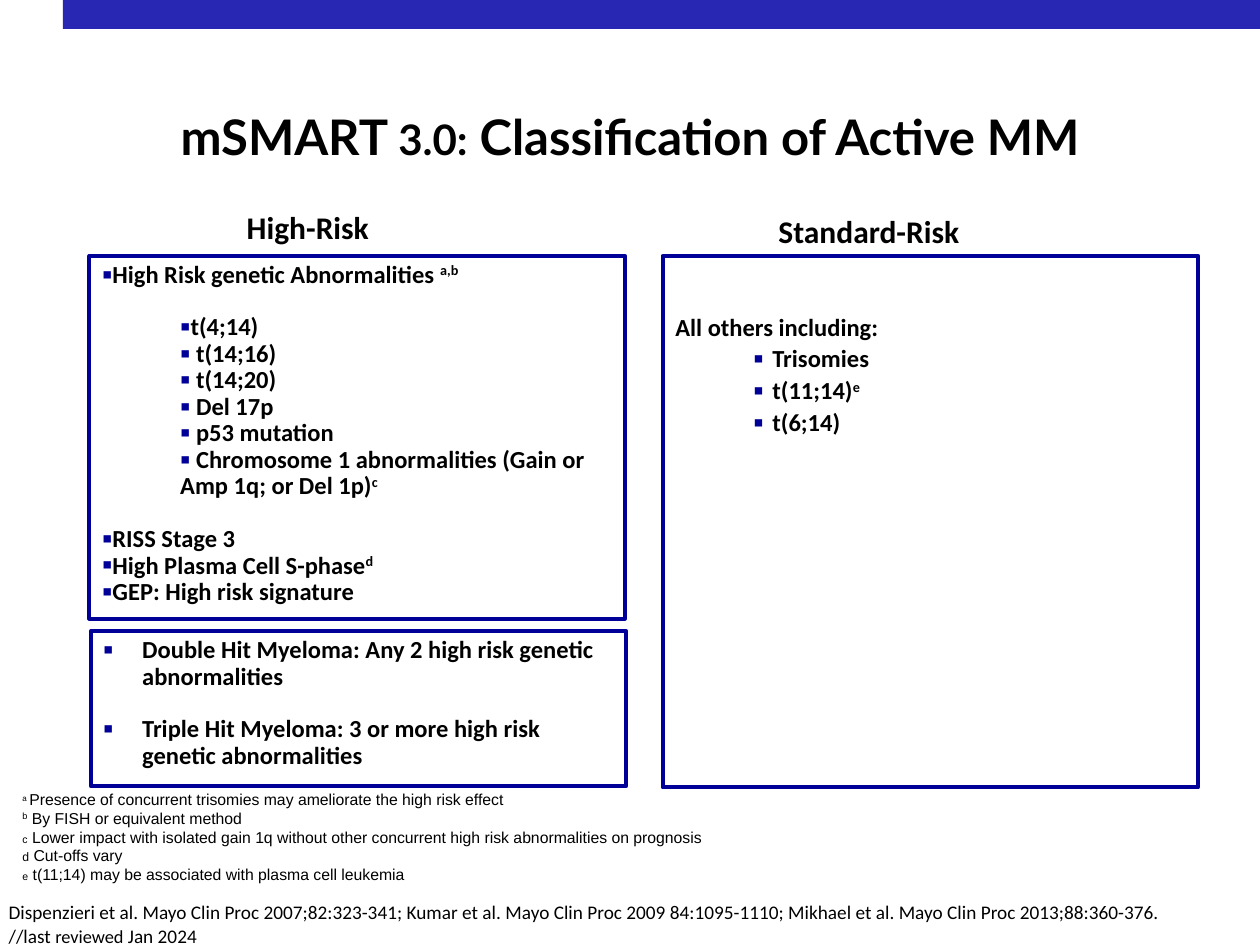
from lxml.etree import SubElement as Sub
from pptx import Presentation
from pptx.dml.color import RGBColor as Rgb
from pptx.enum.shapes import MSO_SHAPE as Kind
from pptx.enum.text import MSO_ANCHOR as Anchor, MSO_AUTO_SIZE as Fit, PP_ALIGN as Align
from pptx.oxml.ns import qn
from pptx.util import Inches, Pt

HUES = {"bar": "2727B3", "frame": "000099", "ink": "000000"}
TOP = dict(left=0, hang=-0.01, bullet=True)
SUB = dict(left=0.62, bullet=True)
GAP = 15  # one skipped line, in points


def hue(name):
    return Rgb.from_string(HUES[name])


def place(shape, left, top, width, height):
    shape.left, shape.top = Inches(left), Inches(top)
    shape.width, shape.height = Inches(width), Inches(height)


def mark(props, bullet):
    """Give paragraph properties a square bullet, or none."""
    if not bullet:
        Sub(props, qn("a:buNone"))
        return
    tint = Sub(props, qn("a:buClr"))
    Sub(tint, qn("a:srgbClr"), val=HUES["frame"])
    Sub(props, qn("a:buSzPct"), val="120000")
    Sub(props, qn("a:buFont"), typeface="Arial")
    Sub(props, qn("a:buChar"), char="▪")


def ready(shape, wrap=True, inset=0.05):
    frame = shape.text_frame
    frame.word_wrap = wrap
    frame.auto_size = Fit.NONE
    frame.vertical_anchor = Anchor.TOP
    frame.margin_top = Inches(inset)
    return frame


def write(frame, text, size=14, font="Calibri", bold=True, align=Align.LEFT,
          left=0, hang=0, bullet=False, before=0, line=0.9, tab=None):
    """Add a paragraph; text is a string or (text, size) runs, ^ toggles superscript."""
    para = frame.paragraphs[0]
    if para.runs:
        para = frame.add_paragraph()
    props = para._p.get_or_add_pPr()
    props.set("marL", str(Inches(left)))
    props.set("indent", str(Inches(hang)))
    mark(props, bullet)
    if tab:
        stops = Sub(props, qn("a:tabLst"))
        Sub(stops, qn("a:tab"), pos=str(Inches(tab)), algn="l")
    para.alignment, para.line_spacing = align, line
    para.space_before, para.space_after = Pt(before), Pt(0)
    runs = [(text, size)] if isinstance(text, str) else text
    for words, points in runs:
        for i, part in enumerate(words.split("^")):
            if not part:
                continue
            run = para.add_run()
            run.text = part
            face = run.font
            face.name, face.size, face.bold = font, Pt(points), bold
            face.color.rgb = hue("ink")
            if i % 2:
                run._r.get_or_add_rPr().set("baseline", "30000")


def label(slide, text, box, wrap=True, **style):
    shape = slide.shapes.add_textbox(*map(Inches, box))
    write(ready(shape, wrap), text, **style)
    return shape.text_frame


def block(slide, box):
    shape = slide.shapes.add_shape(Kind.RECTANGLE, *map(Inches, box))
    shape.shadow.inherit = False
    return shape


def outline(shape):
    shape.fill.background()
    shape.line.color.rgb = hue("frame")
    shape.line.width = Pt(2.25)


def panel(shape, box, items, inset=0.05):
    """Frame a shape and fill it with (text, style) items."""
    place(shape, *box)
    outline(shape)
    frame = ready(shape, inset=inset)
    for text, style in items:
        write(frame, text, **style)


def main():
    deck = Presentation()
    deck.slide_width, deck.slide_height = Inches(10), Inches(7.5)
    slide = deck.slides.add_slide(deck.slide_layouts[3])
    title, high, other = slide.placeholders

    bar = block(slide, (0.5, 0, 9.5, 0.23))
    bar.fill.solid()
    bar.fill.fore_color.rgb = hue("bar")
    bar.line.fill.background()

    place(title, 0, 0.85, 10, 1.26)
    name = [("mSMART", 28), (" 3.0:", 24), (" Classification of Active MM", 28)]
    write(ready(title), name, font="Lato", align=Align.CENTER)

    genes = ["t(4;14)", " t(14;16)", " t(14;20)", " Del 17p", " p53 mutation",
             " Chromosome 1 abnormalities (Gain or Amp 1q; or Del 1p)^c"]
    signs = ["RISS Stage 3", "High Plasma Cell S-phase^d", "GEP: High risk signature"]
    items = [("High Risk genetic Abnormalities ^a,b", TOP)]
    for group, style in ((genes, SUB), (signs, TOP)):
        items += [(text, dict(style, before=0 if i else GAP))
                  for i, text in enumerate(group)]
    panel(high, (0.71, 2.03, 4.25, 2.88), items)

    mild = dict(left=0.77, hang=-0.15, bullet=True, before=3)
    items = [("All others including:", {})]
    items += [(text, mild) for text in ("Trisomies", "t(11;14)^e", "t(6;14)")]
    panel(other, (5.26, 2.03, 4.25, 4.22), items, inset=0.47)

    hit = dict(left=0.31, hang=-0.31, bullet=True)
    box = (0.72, 5.01, 4.25, 1.23)
    panel(block(slide, box), box, [
        ("Double Hit Myeloma: Any 2 high risk genetic abnormalities", hit),
        ("Triple Hit Myeloma: 3 or more high risk genetic abnormalities",
         dict(hit, before=GAP))])

    head = dict(wrap=False, size=18, line=1)
    label(slide, "High-Risk", (1.86, 1.6, 1.18, 0.4), **head)
    label(slide, "Standard-Risk", (6.08, 1.63, 1.65, 0.4), **head)

    note = dict(font="Arial", bold=False, line=0.8)
    first, *rest = [
        ("^a ^", 8, "Presence of concurrent trisomies may ameliorate the high risk effect"),
        ("^b^", 9, " By FISH or equivalent method"),
        ("c", 6, " Lower impact with isolated gain 1q without other concurrent"
                 " high risk abnormalities on prognosis"),
        ("d", 7, " Cut-offs vary"),
        ("e", 6, " t(11;14) may be associated with plasma cell leukemia")]
    notes = label(slide, [first[:2], (first[2], 9)], (0.08, 6.25, 9.24, 1.13), **note)
    for key, size, text in rest:
        write(notes, [(key, size), (text, 9)], before=2, **note)

    cite = ("Dispenzieri et al. Mayo Clin Proc 2007;82:323-341; "
            "Kumar et al. Mayo Clin Proc 2009 84:1095-1110; "
            "Mikhael et al. Mayo Clin Proc 2013;88:360-376.\t//last ")
    label(slide, [(cite, 11), ("reviewed", 10.5), (" Jan 2024", 11)],
          (-0.03, 7.1, 10, 0.47), bold=False, line=1, tab=9.29)

    deck.save("out.pptx")


if __name__ == "__main__":
    main()
